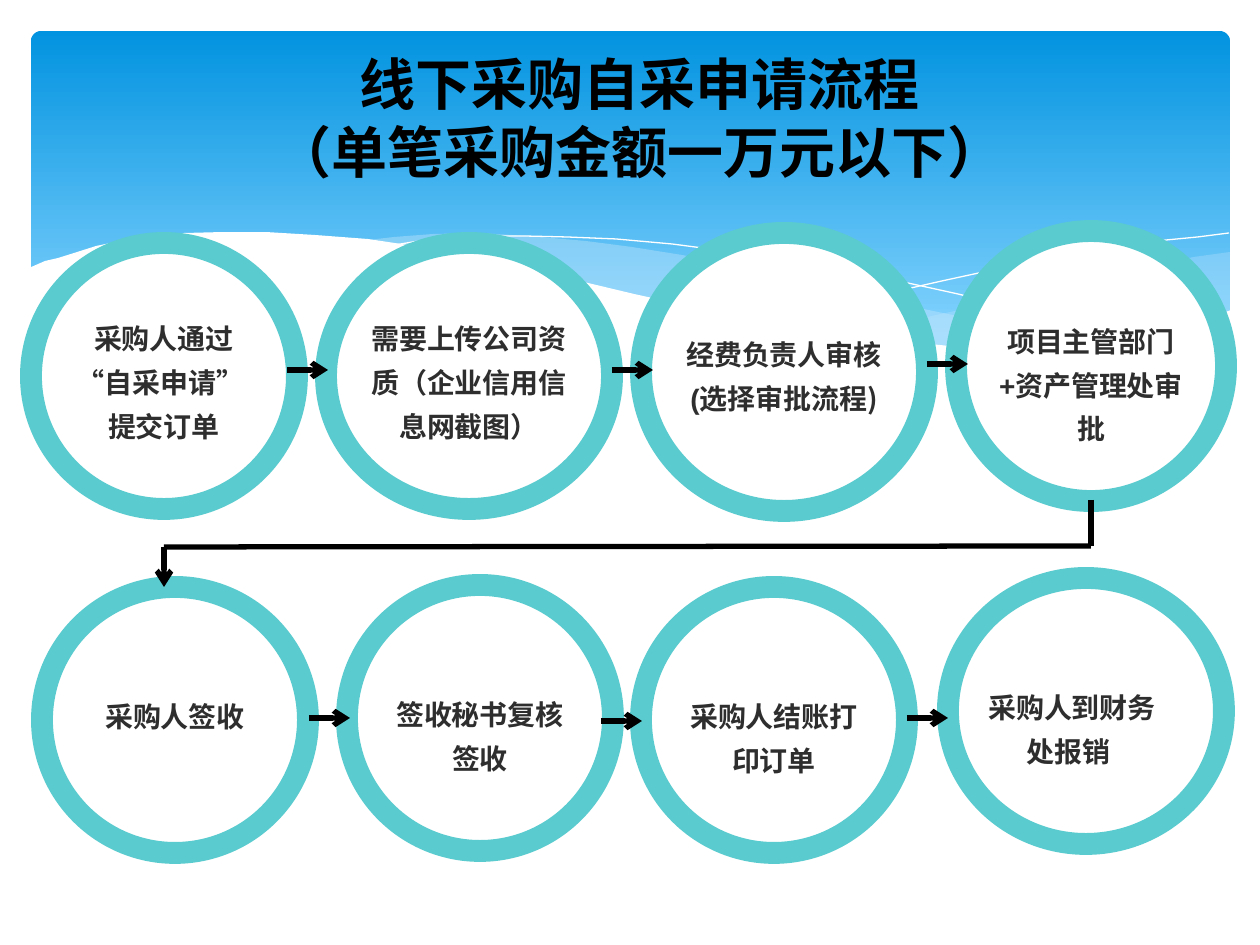
from dataclasses import dataclass

from lxml import etree
from pptx import Presentation
from pptx import util as u
from pptx.dml import color
from pptx.enum import shapes, text
from pptx.oxml import ns

EMU_PER_PX = 914400 / 126


@dataclass(frozen=True)
class Theme:
    ink: str = "000000"
    body: str = "2E2E2E"
    ring: str = "5ACBCE"
    white: str = "FFFFFF"
    sky_top: str = "0293E0"
    sky_bottom: str = "83D3FE"
    wave: str = "C6E7FC"
    latin: str = "Arial"
    east_asian: str = "Noto Sans CJK SC"
    title_size: int = 32
    body_size: int = 16
    ring_width: float = 12.5
    arrow_width: int = 3


def px(length):
    return u.Emu(round(length * EMU_PER_PX))


def rgb(value):
    return color.RGBColor.from_string(value)


class SlideBuilder:
    def __init__(self, slide, theme):
        self.items = slide.shapes
        self.theme = theme

    def add_run(self, para, words, size, colour, latin=None):
        span = para.add_run()
        span.text = words
        span.font.size = u.Pt(size)
        span.font.bold = True
        span.font.name = latin or self.theme.latin
        span.font.color.rgb = rgb(colour)
        east = etree.SubElement(span.font._element, ns.qn("a:ea"))
        east.set("typeface", self.theme.east_asian)

    def sky(self, left, top, width, height):
        panel = self.items.add_shape(shapes.MSO_SHAPE.ROUNDED_RECTANGLE,
                                     px(left), px(top), px(width), px(height))
        panel.adjustments[0] = 0.03
        panel.shadow.inherit = False
        panel.line.fill.background()
        panel.fill.gradient()
        panel.fill.gradient_angle = 270
        stops = ((0, self.theme.sky_top), (0.9, self.theme.sky_bottom))
        for stop, (position, colour) in zip(panel.fill.gradient_stops, stops):
            stop.position = position
            stop.color.rgb = rgb(colour)

    def outline(self, points, closed):
        builder = self.items.build_freeform(*points[0], scale=EMU_PER_PX)
        builder.add_line_segments(points[1:], close=closed)
        shape = builder.convert_to_shape()
        shape.shadow.inherit = False
        return shape

    def wave(self, points, colour, opacity=100):
        shape = self.outline(points, closed=True)
        shape.line.fill.background()
        shape.fill.solid()
        shape.fill.fore_color.rgb = rgb(colour)
        if opacity < 100:
            swatch = shape._element.spPr.find(".//" + ns.qn("a:srgbClr"))
            etree.SubElement(swatch, ns.qn("a:alpha")).set("val", str(opacity * 1000))

    def hairline(self, points):
        shape = self.outline(points, closed=False)
        shape.fill.background()
        shape.line.color.rgb = rgb(self.theme.white)
        shape.line.width = u.Pt(0)

    def title(self, left, top, width, height, lines):
        box = self.items.add_textbox(px(left), px(top), px(width), px(height))
        frame = box.text_frame
        frame.word_wrap = True
        frame.vertical_anchor = text.MSO_ANCHOR.MIDDLE
        para = frame.paragraphs[0]
        para.alignment = text.PP_ALIGN.CENTER
        for index, line in enumerate(lines):
            if index:
                para.add_line_break()
            self.add_run(para, line, self.theme.title_size, self.theme.ink)

    def step(self, area, inset, paragraphs, hanging=0):
        """Ringed circle; each paragraph is a list of (words, font) runs."""
        circle = self.items.add_shape(shapes.MSO_SHAPE.OVAL, *map(px, area))
        circle.shadow.inherit = False
        circle.fill.solid()
        circle.fill.fore_color.rgb = rgb(self.theme.white)
        circle.line.color.rgb = rgb(self.theme.ring)
        circle.line.width = u.Pt(self.theme.ring_width)
        frame = circle.text_frame
        frame.word_wrap = True
        frame.vertical_anchor = text.MSO_ANCHOR.TOP
        frame.margin_left = frame.margin_right = frame.margin_bottom = 0
        frame.margin_top = px(inset)
        for index, runs in enumerate(paragraphs):
            para = frame.add_paragraph() if index else frame.paragraphs[0]
            para.line_spacing = 1.3
            para.alignment = text.PP_ALIGN.LEFT if hanging else text.PP_ALIGN.CENTER
            if hanging:
                properties = para._p.get_or_add_pPr()
                properties.set("marL", str(px(hanging)))
                properties.set("indent", str(-px(hanging)))
            for words, latin in runs:
                self.add_run(para, words, self.theme.body_size, self.theme.body, latin)

    def connector(self, start, end, arrow=True):
        line = self.items.add_connector(shapes.MSO_CONNECTOR.STRAIGHT,
                                        *map(px, (*start, *end)))
        line.line.color.rgb = rgb(self.theme.ink)
        line.line.width = u.Pt(self.theme.arrow_width)
        if arrow:
            stroke = line.line._get_or_add_ln()
            etree.SubElement(stroke, ns.qn("a:tailEnd")).set("type", "arrow")
        etree.SubElement(line._element.spPr, ns.qn("a:effectLst"))


RIGHT_WAVE = [
    (1230, 252), (1194, 257), (1159, 265), (1104, 277), (1048, 290), (982, 305),
    (919, 319), (833, 334), (871, 339), (906, 343), (954, 347), (1012, 350),
    (1052, 349), (1099, 345), (1140, 339), (1178, 330), (1213, 318), (1230, 311)]
MIDDLE_WAVE = [
    (1125, 344), (1055, 334), (977, 320), (890, 302), (793, 280), (736, 266),
    (682, 255), (632, 247), (586, 241), (529, 236), (479, 233), (433, 234),
    (394, 237), (360, 241), (407, 248), (456, 256), (509, 266), (566, 280),
    (668, 302), (757, 321), (838, 335), (910, 345), (974, 349), (1031, 350),
    (1080, 349)]
FALLING_LINE = [
    (389, 246), (413, 242), (445, 238), (487, 236), (524, 236), (567, 237),
    (616, 239), (672, 244), (733, 252), (801, 262), (876, 276), (958, 294),
    (1047, 316), (1143, 343)]
RISING_LINE = [
    (772, 324), (823, 310), (876, 296), (942, 281), (1016, 265), (1091, 251),
    (1146, 242), (1198, 237), (1229, 233)]
WHITE_WAVE = [
    (1231, 310), (1197, 323), (1159, 334), (1118, 342), (1071, 347), (1019, 349),
    (959, 347), (892, 340), (816, 330), (730, 315), (634, 294), (563, 277),
    (493, 260), (428, 248), (368, 239), (315, 235), (266, 232), (223, 232),
    (184, 233), (150, 236), (120, 241), (96, 246), (74, 253), (58, 258),
    (45, 261), (29, 268), (29, 414), (1231, 414)]

# area (left, top, width, height), top inset, paragraphs, hanging indent
STEPS = [
    ((31, 243, 266, 266), 30,
     [[("采购人通过", None)], [("“自采申请” ", None)], [("提交订单", None)]], 0),
    ((326, 243, 286, 266), 30, [[("需要上传公司资质（企业信用信息网截图）", None)]], 0),
    ((641, 233, 286, 278), 54,
     [[("经费负责人审核(选择审批流程", None), (")", Theme.east_asian)]], 0),
    ((956, 231, 270, 270), 44, [[("项目主管部门+资产管理处审批", None)]], 0),
    ((42, 587, 266, 266), 64, [[("采购人签收", None)]], 0),
    ((347, 585, 266, 266), 64, [[("签收秘书复核签收", None)]], 0),
    ((641, 587, 266, 266), 64, [[("采购人结账打印订单", None)]], 0),
    ((948, 578, 276, 266), 64, [[("采购人到财务处报销", None)]], 38),
]
ARROW_LENGTH = 41
ARROW_STARTS = [(287, 370), (612, 370), (927, 364), (309, 718), (601, 721), (907, 718)]


def main():
    deck = Presentation()
    deck.slide_width, deck.slide_height = px(1260), px(945)
    theme = Theme()
    page = SlideBuilder(deck.slides.add_slide(deck.slide_layouts[6]), theme)

    page.sky(31, 31, 1199, 340)
    page.wave(RIGHT_WAVE, theme.wave, 29)
    page.wave(MIDDLE_WAVE, theme.wave, 40)
    page.hairline(FALLING_LINE)
    page.hairline(RISING_LINE)
    page.wave(WHITE_WAVE, theme.white)
    page.title(49, 38, 1182, 158, ["线下采购自采申请流程", "（单笔采购金额一万元以下）"])

    for area, inset, paragraphs, hanging in STEPS:
        page.step(area, inset, paragraphs, hanging)
    for x, y in ARROW_STARTS:
        page.connector((x, y), (x + ARROW_LENGTH, y))
    page.connector((1091, 500), (1091, 546), arrow=False)
    page.connector((1091, 546), (164, 547), arrow=False)
    page.connector((164, 547), (164, 587))

    deck.save("out.pptx")


if __name__ == "__main__":
    main()
